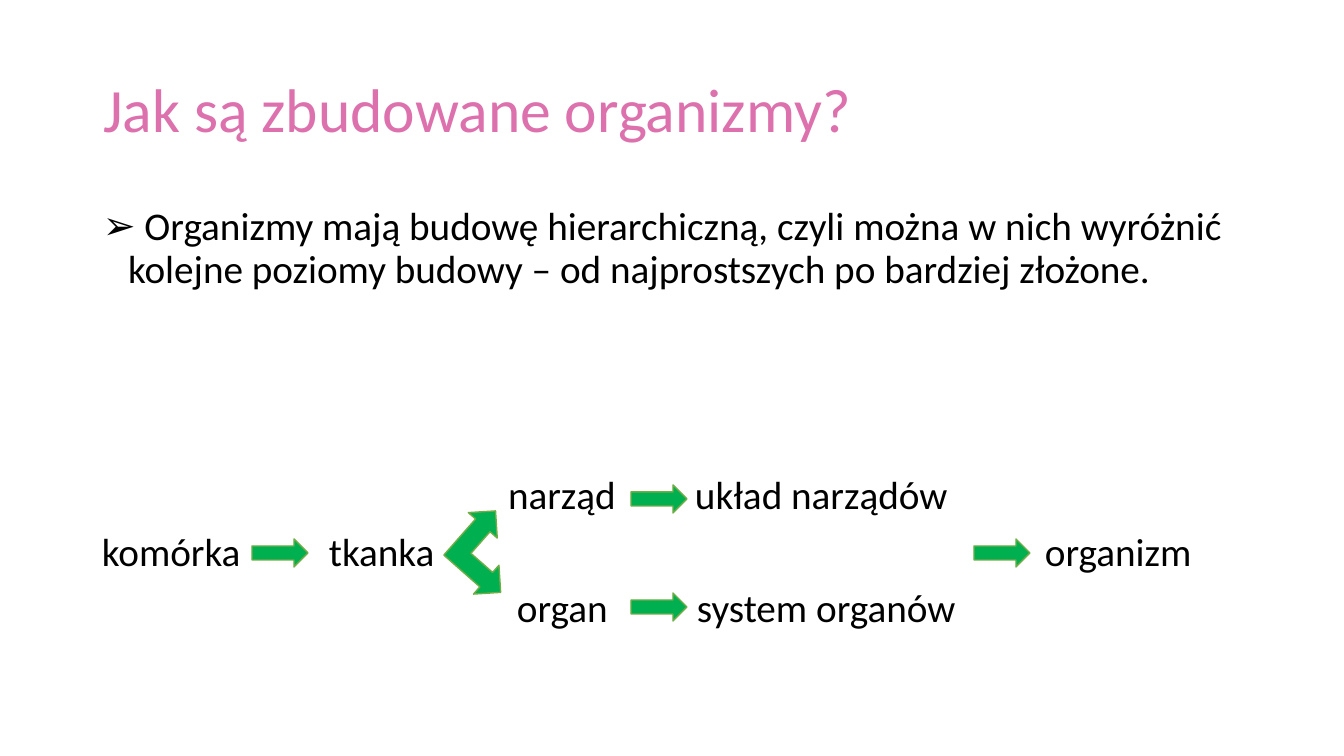
"""Build a slide on the levels of organisation in living things."""
from lxml import etree
from pptx import Presentation, util as u
from pptx.dml.color import RGBColor
from pptx.enum import shapes, text
from pptx.oxml.ns import qn

EMU_PER_PX = 914400 / 100.8
FONT = "Calibri"
LABELS = [
    ("narząd", 508, 470, 116),
    ("układ narządów", 695, 470, 262),
    ("komórka", 102, 527, 146),
    ("tkanka", 329, 527, 112),
    ("organizm", 1045, 527, 156),
    ("organ", 517, 583, 100),
    ("system organów", 697, 583, 268),
]
STEP_ARROWS = [(252, 539), (631, 593), (631, 485), (974, 539)]


def px(*lengths):
    """Turn pixel lengths into EMU."""
    return [u.Emu(round(length * EMU_PER_PX)) for length in lengths]


def color(value):
    """Turn a hex string into a colour."""
    return RGBColor.from_string(value)


def write(box, wording, size, ink, spacing=1.0):
    """Put one left-aligned, formatted paragraph in a box."""
    frame = box.text_frame
    frame.text = wording
    frame.word_wrap = True
    para = frame.paragraphs[0]
    para.alignment = text.PP_ALIGN.LEFT
    para.line_spacing = spacing
    font = para.runs[0].font
    font.name, font.size = FONT, u.Pt(size)
    font.color.rgb = color(ink)
    return para


def add_title(page, wording):
    """Place and format the title."""
    title = page.shapes.title
    title.left, title.top, title.width, title.height = px(93, 40, 1159, 146)
    write(title, wording, 44, "DC71AD", 0.9)
    title.text_frame.vertical_anchor = text.MSO_ANCHOR.MIDDLE


def add_bullet(page, wording):
    """Add the introductory bullet paragraph."""
    box = page.shapes.add_textbox(*px(93, 202, 1159, 100))
    para = write(box, wording, 28, "000000", 0.9)
    properties = para._p.get_or_add_pPr()
    indent = u.Inches(0.25)
    properties.set("marL", str(indent))
    properties.set("indent", str(-indent))
    etree.SubElement(properties, qn("a:buFont")).set("typeface", "Arial")
    etree.SubElement(properties, qn("a:buChar")).set("char", "➢")


def add_label(page, wording, left, top, width):
    """Add the name of one level without inner margins."""
    box = page.shapes.add_textbox(*px(left, top, width, 48))
    frame = box.text_frame
    frame.margin_left = frame.margin_right = 0
    frame.margin_top = frame.margin_bottom = 0
    write(box, wording, 28, "000000")


def add_arrow(page, kind, left, top, width, height, rotation=0):
    """Add a green block arrow."""
    arrow = page.shapes.add_shape(kind, *px(left, top, width, height))
    arrow.rotation = rotation
    arrow.shadow.inherit = False
    arrow.fill.solid()
    arrow.fill.fore_color.rgb = color("00B050")
    arrow.line.color.rgb = color("70AD47")
    arrow.line.width = u.Pt(1)


def main():
    """Build and save the slide."""
    deck = Presentation()
    deck.slide_width, deck.slide_height = px(1344, 756)
    page = deck.slides.add_slide(deck.slide_layouts.get_by_name("Title Only"))
    add_title(page, "Jak są zbudowane organizmy?")
    add_bullet(page, " Organizmy mają budowę hierarchiczną, czyli można w nich "
               "wyróżnić kolejne poziomy budowy – od najprostszych po bardziej złożone.")
    for label in LABELS:
        add_label(page, *label)
    kinds = shapes.MSO_SHAPE
    for left, top in STEP_ARROWS:
        add_arrow(page, kinds.RIGHT_ARROW, left, top, 56, 28)
    add_arrow(page, kinds.LEFT_UP_ARROW, 446, 514, 77, 77, 131.4)
    deck.save("out.pptx")


if __name__ == "__main__":
    main()
